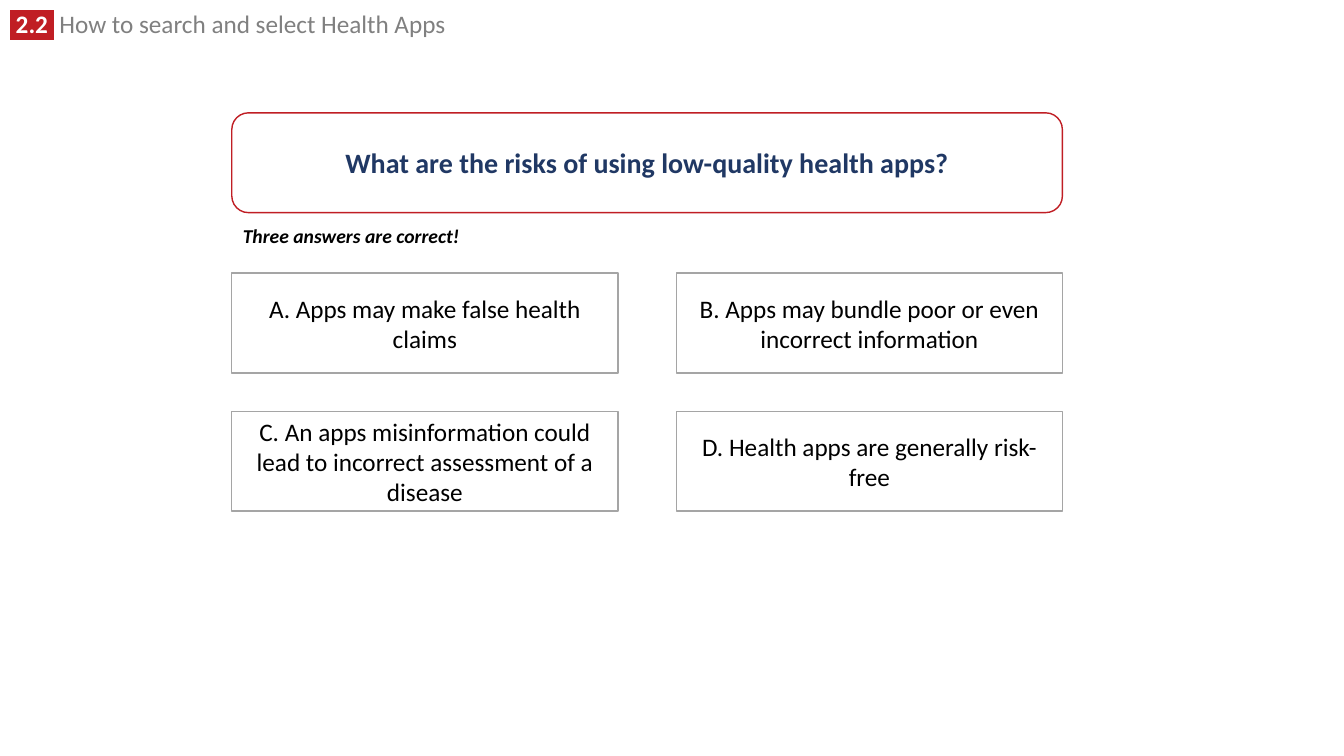
from lxml import etree
from pptx import Presentation
from pptx.dml.color import RGBColor
from pptx.enum.shapes import MSO_SHAPE
from pptx.enum.text import MSO_ANCHOR, MSO_AUTO_SIZE, PP_ALIGN
from pptx.oxml.ns import qn
from pptx.util import Pt

RECT = MSO_SHAPE.RECTANGLE
ROUNDED = MSO_SHAPE.ROUNDED_RECTANGLE
TOP, MIDDLE = MSO_ANCHOR.TOP, MSO_ANCHOR.MIDDLE
LEFT, CENTER = PP_ALIGN.LEFT, PP_ALIGN.CENTER
NO_FIT = MSO_AUTO_SIZE.NONE

WHITE = RGBColor(0xFF, 0xFF, 0xFF)
BLACK = RGBColor(0x00, 0x00, 0x00)
RED = RGBColor(0xC0, 0x1E, 0x24)
NAVY = RGBColor(0x20, 0x38, 0x64)
GRAY = RGBColor(0x80, 0x80, 0x80)
BORDER = RGBColor(0xA5, 0xA5, 0xA5)
FONT = "Calibri"

QUESTION = "What are the risks of using low-quality health apps?"
HINT = "Three answers are correct!"
ANSWERS = [
    "A. Apps may make false health claims",
    "B. Apps may bundle poor or even incorrect information",
    "C. An apps misinformation could lead to incorrect assessment of a disease",
    "D. Health apps are generally risk-free",
]


def add_run(p, text, size, color, bold=False, italic=False):
    r = p.add_run()
    r.text = text
    r.font.size = Pt(size)
    r.font.bold = bold
    r.font.italic = italic
    r.font.color.rgb = color
    r.font.name = FONT
    return r


def highlight(r, color):
    mark = etree.Element(qn("a:highlight"))
    etree.SubElement(mark, qn("a:srgbClr"), val=str(color))
    r.font._element.find(qn("a:solidFill")).addnext(mark)


def add_card(s, shape, x, y, w, h, border, text, size, color, bold=False):
    sp = s.shapes.add_shape(shape, Pt(x), Pt(y), Pt(w), Pt(h))
    sp.shadow.inherit = False
    sp.fill.solid()
    sp.fill.fore_color.rgb = WHITE
    sp.line.color.rgb = border
    sp.line.width = Pt(1)
    tf = sp.text_frame
    tf.word_wrap = True
    tf.vertical_anchor = MIDDLE
    p = tf.paragraphs[0]
    p.alignment = CENTER
    add_run(p, text, size, color, bold)


def add_header(s, x, y, w, h, number, title):
    sp = s.shapes.title
    sp.left, sp.top, sp.width, sp.height = Pt(x), Pt(y), Pt(w), Pt(h)
    tf = sp.text_frame
    tf.word_wrap = True
    tf.auto_size = NO_FIT
    tf.vertical_anchor = TOP
    p = tf.paragraphs[0]
    p.alignment = LEFT
    p.line_spacing = 0.8
    highlight(add_run(p, f" {number} ", 18, WHITE, bold=True), RED)
    add_run(p, f" {title}", 18, GRAY)


def add_hint(s, x, y, w, h):
    tf = s.shapes.add_textbox(Pt(x), Pt(y), Pt(w), Pt(h)).text_frame
    tf.word_wrap = False
    add_run(tf.paragraphs[0], HINT, 14, BLACK, bold=True, italic=True)


def add_quiz(s, x, y, w, h):
    card_h, answer_w, row_step = 71.3, 275.8, 98.7
    add_card(s, ROUNDED, x, y, w, card_h, RED, QUESTION, 20, NAVY, bold=True)
    add_hint(s, x + 0.7, y + 75.6, 170, 24.5)
    first_row = y + h - card_h - row_step
    for i, answer in enumerate(ANSWERS):
        row, col = divmod(i, 2)
        add_card(s, RECT, x + col * (w - answer_w), first_row + row * row_step,
                 answer_w, card_h, BORDER, answer, 18, BLACK)


def main():
    prs = Presentation()
    prs.slide_width, prs.slide_height = Pt(960), Pt(540)
    s = prs.slides.add_slide(prs.slide_layouts[5])
    add_header(s, 0, 6.5, 685.4, 25.2, "2.2", "How to search and select Health Apps")
    add_quiz(s, 165.6, 80.6, 593.3, 284.5)
    prs.save("out.pptx")


if __name__ == "__main__":
    main()
